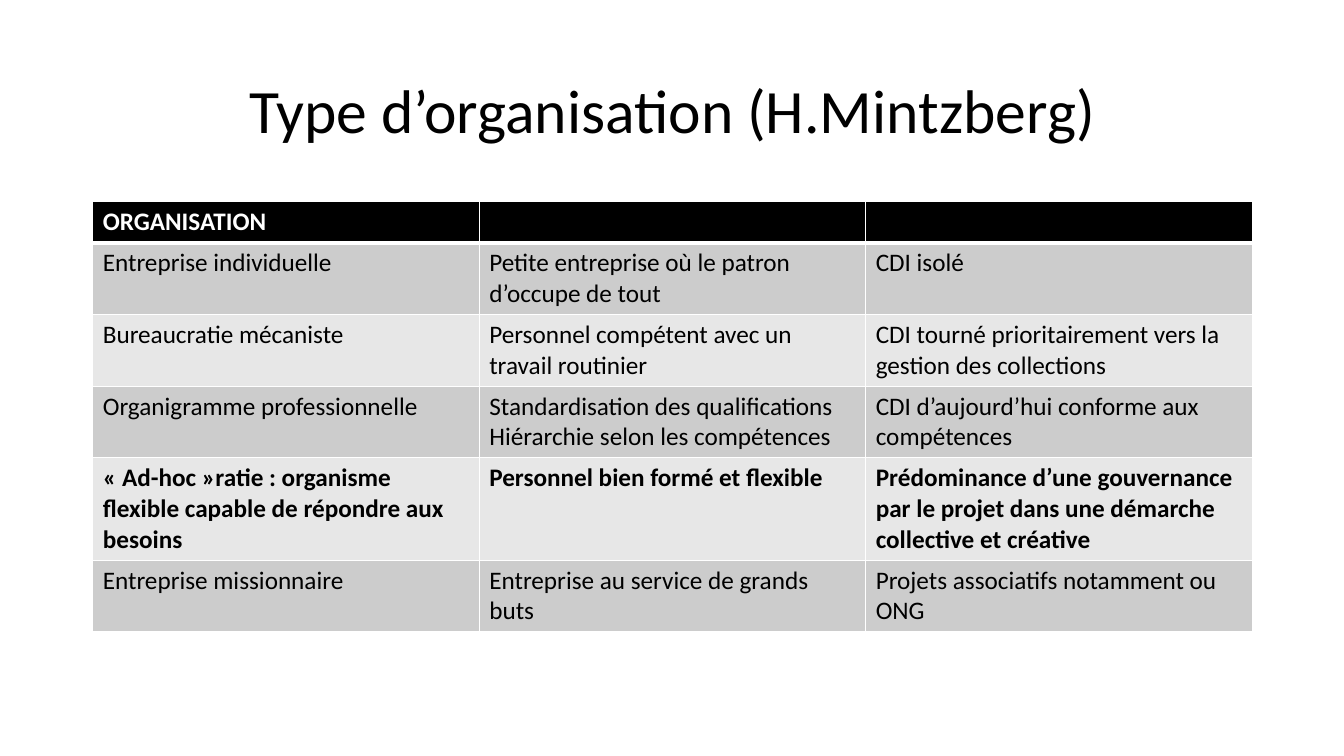
from dataclasses import dataclass

from lxml import etree
from pptx import Presentation
from pptx.dml.color import RGBColor
from pptx.enum import text
from pptx.oxml import ns
from pptx.util import Inches, Pt


@dataclass(frozen=True)
class Theme:
    font: str = "Calibri"
    title_size: int = 44
    body_size: int = 18
    dark: str = "000000"
    light: str = "FFFFFF"
    bands: tuple = ("CCCCCC", "E7E7E7")
    rule: float = 1
    header_rule: float = 3


THEME = Theme()
TITLE = "Type d’organisation (H.Mintzberg)"
HEADER = ("ORGANISATION", "", "")
ORGANISATIONS = [
    ("Entreprise individuelle",
     "Petite entreprise où le patron d’occupe de tout",
     "CDI isolé"),
    ("Bureaucratie mécaniste",
     "Personnel compétent avec un travail routinier",
     "CDI tourné prioritairement vers la gestion des collections"),
    ("Organigramme professionnelle",
     "Standardisation des qualifications\nHiérarchie selon les compétences",
     "CDI d’aujourd’hui conforme aux compétences"),
    ("« Ad-hoc »ratie : organisme flexible capable de répondre aux besoins",
     "Personnel bien formé et flexible",
     "Prédominance d’une gouvernance par le projet dans une démarche "
     "collective et créative"),
    ("Entreprise missionnaire",
     "Entreprise au service de grands buts",
     "Projets associatifs notamment ou ONG"),
]
HIGHLIGHTED_ROW = 4


def add_run(paragraph, wording, size, color, bold=False):
    run = paragraph.add_run()
    run.text = wording
    run.font.name = THEME.font
    run.font.size = Pt(size)
    run.font.bold = bold
    run.font.color.rgb = RGBColor.from_string(color)


def place_title(slide, left, top, width, height):
    title = slide.shapes.title
    title.left, title.top = Inches(left), Inches(top)
    title.width, title.height = Inches(width), Inches(height)
    title.text_frame.vertical_anchor = text.MSO_ANCHOR.MIDDLE
    paragraph = title.text_frame.paragraphs[0]
    paragraph.alignment = text.PP_ALIGN.CENTER
    paragraph.line_spacing = 0.9
    add_run(paragraph, TITLE, THEME.title_size, THEME.dark)


def set_borders(cell, top, bottom):
    """Draw light rules round a cell; top and bottom are widths in points."""
    properties = cell._tc.get_or_add_tcPr()
    widths = {"L": THEME.rule, "R": THEME.rule, "T": top, "B": bottom}
    for side, width in widths.items():
        line = etree.SubElement(properties, ns.qn(f"a:ln{side}"), w=str(Pt(width)))
        fill = etree.SubElement(line, ns.qn("a:solidFill"))
        etree.SubElement(fill, ns.qn("a:srgbClr"), val=THEME.light)


def fill_cell(cell, wording, row):
    is_header = row == 0
    set_borders(cell,
                THEME.header_rule if row == 1 else THEME.rule,
                THEME.header_rule if is_header else THEME.rule)
    background = THEME.dark if is_header else THEME.bands[(row - 1) % 2]
    cell.fill.solid()
    cell.fill.fore_color.rgb = RGBColor.from_string(background)
    if not wording:
        return
    for index, line in enumerate(wording.split("\n")):
        frame = cell.text_frame
        paragraph = frame.add_paragraph() if index else frame.paragraphs[0]
        add_run(paragraph, line, THEME.body_size,
                THEME.light if is_header else THEME.dark,
                bold=is_header or row == HIGHLIGHTED_ROW)


def add_organisation_table(slide, left, top, width, row_height):
    """Add the table; rows grow from row_height to fit their text."""
    rows = [HEADER, *ORGANISATIONS]
    table = slide.shapes.add_table(
        len(rows), len(HEADER), Inches(left), Inches(top),
        Inches(width), Inches(row_height * len(rows))).table
    for row, wordings in enumerate(rows):
        for column, wording in enumerate(wordings):
            fill_cell(table.cell(row, column), wording, row)


def main():
    presentation = Presentation()
    presentation.slide_width = Inches(13.33)
    presentation.slide_height = Inches(7.5)
    title_only = presentation.slide_layouts.get_by_name("Title Only")
    slide = presentation.slides.add_slide(title_only)
    place_title(slide, left=0.92, top=0.4, width=11.5, height=1.45)
    add_organisation_table(slide, left=0.92, top=2, width=11.5, row_height=0.41)
    presentation.save("out.pptx")


if __name__ == "__main__":
    main()
